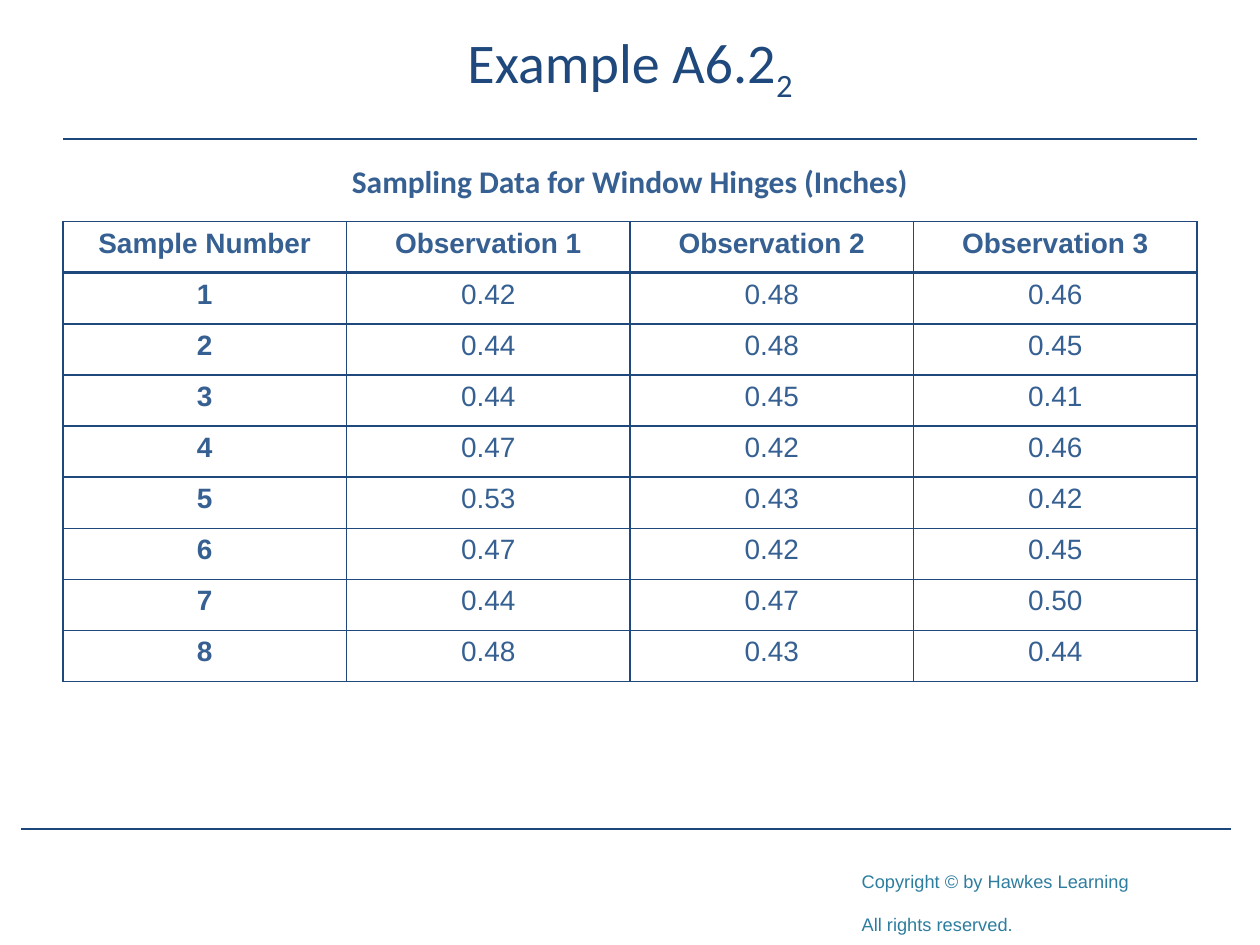
import pptx
import pptx.util
import pptx.dml.color
import pptx.enum.shapes
import pptx.enum.text
import pptx.oxml.ns
import lxml.etree

Inches = pptx.util.Inches
Pt = pptx.util.Pt
ALIGN = pptx.enum.text.PP_ALIGN
ANCHOR = pptx.enum.text.MSO_ANCHOR

TITLE = ("Example A6.2", "2")
CAPTION = "Sampling Data for Window Hinges (Inches)"
NOTICE = ("Copyright © by Hawkes Learning", "All rights reserved.")
HEADS = ("Sample Number", "Observation 1", "Observation 2", "Observation 3")
DATA = (
    (0.42, 0.48, 0.46),
    (0.44, 0.48, 0.45),
    (0.44, 0.45, 0.41),
    (0.47, 0.42, 0.46),
    (0.53, 0.43, 0.42),
    (0.47, 0.42, 0.45),
    (0.44, 0.47, 0.50),
    (0.48, 0.43, 0.44),
)
RULES = ((0.5, 9.5, 1.1), (0.17, 9.77, 6.58))  # left, right, height on the slide

THEME = {
    "title": ("Calibri", 32, "1F497D", False),
    "caption": ("Calibri", 18, "376092", True),
    "head": ("Arial", 16, "366092", True),
    "body": ("Arial", 16, "366092", False),
    "notice": ("Arial", 18, "2D7D9F", False),
    "rule": "1C477C",
    "border": "1F497D",
}


def color(code):
    return pptx.dml.color.RGBColor.from_string(code)


def style(run, role, low=False):
    """Apply a text role; low sets the run as a subscript."""
    font = run.font
    font.name, size, code, font.bold = THEME[role]
    font.size = Pt(size)
    font.color.rgb = color(code)
    if low:
        run._r.get_or_add_rPr().set("baseline", "-25000")


def add_box(slide, left, top, width, height):
    box = slide.shapes.add_textbox(*map(Inches, (left, top, width, height)))
    box.text_frame.word_wrap = True
    return box.text_frame


def add_title(slide):
    frame = add_box(slide, 0.5, 0.12, 9, 1)
    frame.vertical_anchor = ANCHOR.MIDDLE
    para = frame.paragraphs[0]
    para.alignment = ALIGN.CENTER
    para.line_spacing = Pt(30)
    for index, text in enumerate(TITLE):
        run = para.add_run()
        run.text = text
        style(run, "title", low=index == 1)


def add_caption(slide):
    frame = add_box(slide, 2.5, 1.24, 5, 0.4)
    frame.text = CAPTION
    para = frame.paragraphs[0]
    para.alignment = ALIGN.CENTER
    style(para.runs[0], "caption")


def add_notice(slide):
    frame = add_box(slide, 6.74, 6.4, 3.08, 1.08)
    frame.margin_top = Inches(0.34)
    frame.text = "\n".join(NOTICE)
    for para in frame.paragraphs:
        style(para.runs[0], "notice", low=True)


def add_rule(slide, left, right, top):
    line = slide.shapes.add_connector(
        pptx.enum.shapes.MSO_CONNECTOR.STRAIGHT,
        Inches(left), Inches(top), Inches(right), Inches(top))
    line.line.color.rgb = color(THEME["rule"])
    line.line.width = Pt(1.25)
    lxml.etree.SubElement(line._element.spPr, pptx.oxml.ns.qn("a:effectLst"))


def set_border(cell, widths):
    """Draw the sides named in widths (points), ahead of the cell's fill."""
    qn = pptx.oxml.ns.qn
    props = cell._tc.get_or_add_tcPr()
    for index, (side, width) in enumerate(widths.items()):
        line = lxml.etree.Element(qn("a:ln" + side), w=str(Pt(width)))
        fill = lxml.etree.SubElement(line, qn("a:solidFill"))
        lxml.etree.SubElement(fill, qn("a:srgbClr"), val=THEME["border"])
        props.insert(index, line)


def add_grid(slide):
    rows = [HEADS]
    for number, values in enumerate(DATA, 1):
        rows.append((str(number), *(f"{value:.2f}" for value in values)))
    table = slide.shapes.add_table(
        len(rows), len(HEADS),
        Inches(0.5), Inches(1.76), Inches(9), Inches(3.65)).table
    table.horz_banding = False
    for r, row in enumerate(rows):
        for c, text in enumerate(row):
            cell = table.cell(r, c)
            cell.text = text
            cell.fill.background()
            para = cell.text_frame.paragraphs[0]
            para.alignment = ALIGN.CENTER
            style(para.runs[0], "head" if r == 0 or c == 0 else "body")
            set_border(cell, {"L": 1, "R": 1,
                              "T": 2 if r == 1 else 1,
                              "B": 2 if r == 0 else 1})


def main():
    deck = pptx.Presentation()
    deck.slide_width, deck.slide_height = Inches(10), Inches(7.5)
    slide = deck.slides.add_slide(deck.slide_layouts[6])
    add_notice(slide)
    for rule in RULES:
        add_rule(slide, *rule)
    add_title(slide)
    add_caption(slide)
    add_grid(slide)
    deck.save("out.pptx")


if __name__ == "__main__":
    main()
